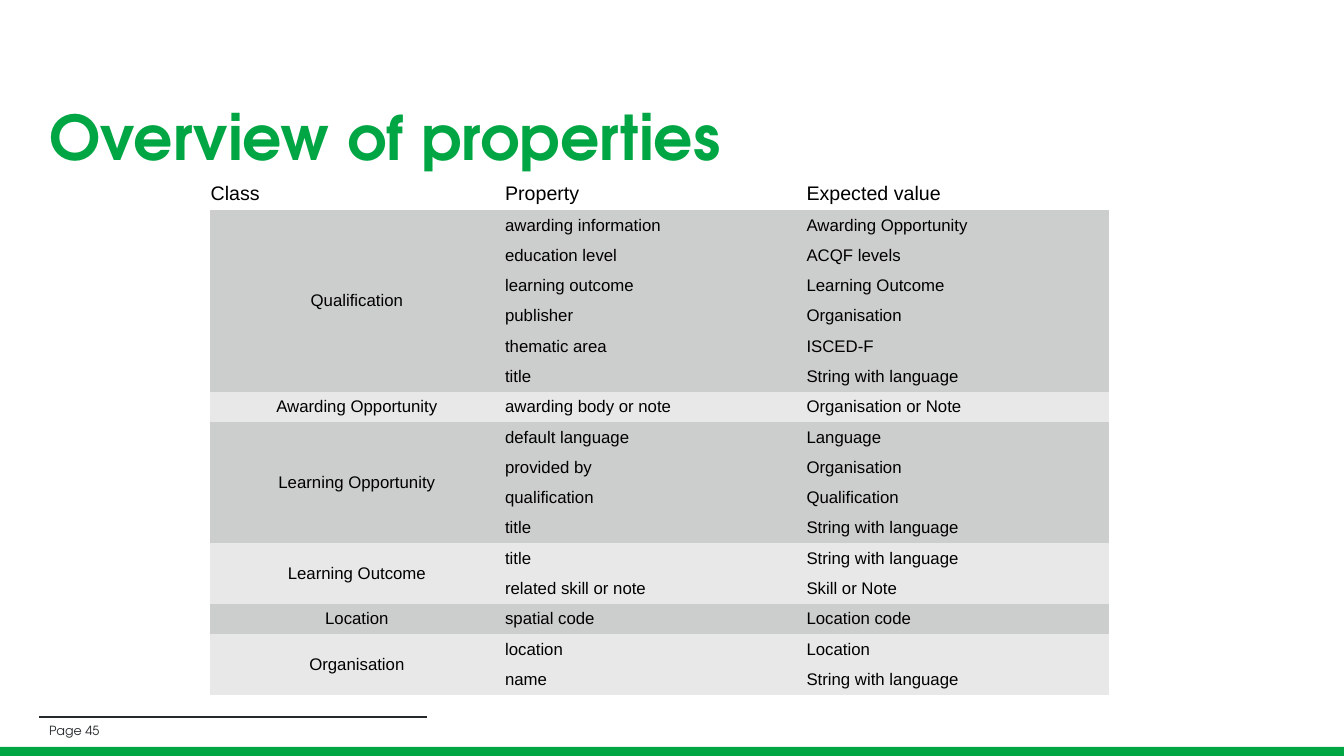
from lxml import etree
from pptx import Presentation
from pptx.dml.color import RGBColor
from pptx.enum.shapes import MSO_CONNECTOR, MSO_SHAPE
from pptx.enum.text import MSO_ANCHOR, PP_ALIGN
from pptx.oxml.ns import qn
from pptx.util import Inches, Pt

# Content
TITLE = "Overview of properties"
PAGE_LABEL = "Page 45"
HEADINGS = ("Class", "Property", "Expected value")
CLASSES = [
    ("Qualification", [
        ("awarding information", "Awarding Opportunity"),
        ("education level", "ACQF levels"),
        ("learning outcome", "Learning Outcome"),
        ("publisher", "Organisation"),
        ("thematic area", "ISCED-F"),
        ("title", "String with language"),
    ]),
    ("Awarding Opportunity", [("awarding body or note", "Organisation or Note")]),
    ("Learning Opportunity", [
        ("default language", "Language"),
        ("provided by", "Organisation"),
        ("qualification", "Qualification"),
        ("title", "String with language"),
    ]),
    ("Learning Outcome", [
        ("title", "String with language"),
        ("related skill or note", "Skill or Note"),
    ]),
    ("Location", [("spatial code", "Location code")]),
    ("Organisation", [
        ("location", "Location"),
        ("name", "String with language"),
    ]),
]

# Style
GREEN = RGBColor(0x00, 0xA6, 0x43)
DARK = RGBColor(0x24, 0x28, 0x2A)
BLACK = RGBColor(0x00, 0x00, 0x00)
BANDS = (RGBColor(0xCC, 0xCD, 0xCD), RGBColor(0xE8, 0xE8, 0xE8))
BRAND_FONT = "TeX Gyre Adventor"
TABLE_FONT = "Arial"
NO_STYLE_NO_GRID = "{2D5ABB26-0587-4C30-8999-92F81FD0307C}"
COLUMN_WIDTHS = (2.92, 2.99, 3.01)
HEADER_HEIGHT, ROW_HEIGHT = 0.32, 0.29


def add_run(paragraph, text, font, size, color, bold=False):
    run = paragraph.add_run()
    run.text = text
    run.font.name = font
    run.font.size = Pt(size)
    run.font.bold = bold
    run.font.color.rgb = color


def add_label(slide, box, text, size, color, bold=False):
    frame = slide.shapes.add_textbox(*map(Inches, box)).text_frame
    frame.word_wrap = True
    frame.vertical_anchor = MSO_ANCHOR.MIDDLE
    paragraph = frame.paragraphs[0]
    add_run(paragraph, text, BRAND_FONT, size, color, bold)
    return paragraph


def fill_cell(cell, text, size, align=PP_ALIGN.JUSTIFY, color=None):
    cell.margin_left = cell.margin_right = Inches(0.01)
    cell.margin_top = cell.margin_bottom = Inches(0.05)
    cell.vertical_anchor = MSO_ANCHOR.MIDDLE
    if color is None:
        cell.fill.background()
    else:
        cell.fill.solid()
        cell.fill.fore_color.rgb = color
    paragraph = cell.text_frame.paragraphs[0]
    paragraph.alignment = align
    add_run(paragraph, text, TABLE_FONT, size, BLACK)


def add_footer(slide):
    rule = slide.shapes.add_connector(
        MSO_CONNECTOR.STRAIGHT, Inches(0.39), Inches(7.11), Inches(4.24), Inches(7.11))
    rule.line.color.rgb = DARK
    rule.line.width = Pt(1.5)
    etree.SubElement(rule.element.find(qn("p:spPr")), qn("a:effectLst"))

    bar = slide.shapes.add_shape(
        MSO_SHAPE.RECTANGLE, Inches(-0.03), Inches(7.41), Inches(13.4), Inches(0.13))
    bar.shadow.inherit = False
    bar.fill.solid()
    bar.fill.fore_color.rgb = GREEN
    bar.line.fill.background()

    add_label(slide, (0.39, 7.15, 4.06, 0.19), PAGE_LABEL, 9, DARK)


def add_property_table(slide):
    property_count = sum(len(properties) for _, properties in CLASSES)
    frame = slide.shapes.add_table(
        property_count + 1, len(HEADINGS), Inches(2.08), Inches(1.75),
        Inches(sum(COLUMN_WIDTHS)),
        Inches(HEADER_HEIGHT + property_count * ROW_HEIGHT))
    table = frame.table
    table.first_row = table.horz_banding = False
    next(frame.element.iter(qn("a:tableStyleId"))).text = NO_STYLE_NO_GRID

    for column, width in zip(table.columns, COLUMN_WIDTHS):
        column.width = Inches(width)
    for index, row in enumerate(table.rows):
        row.height = Inches(ROW_HEIGHT if index else HEADER_HEIGHT)
    for index, heading in enumerate(HEADINGS):
        fill_cell(table.cell(0, index), heading, 14)

    # One merged class cell beside its properties, shades alternating by class
    first = 1
    for index, (name, properties) in enumerate(CLASSES):
        color = BANDS[index % 2]
        class_cell = table.cell(first, 0)
        if len(properties) > 1:
            class_cell.merge(table.cell(first + len(properties) - 1, 0))
        fill_cell(class_cell, name, 12, PP_ALIGN.CENTER, color)
        for row, values in enumerate(properties, first):
            for column, value in enumerate(values, 1):
                fill_cell(table.cell(row, column), value, 12, color=color)
        first += len(properties)


def main():
    presentation = Presentation()
    presentation.slide_width = Inches(13.33)
    presentation.slide_height = Inches(7.5)
    slide = presentation.slides.add_slide(presentation.slide_layouts[6])

    add_footer(slide)
    title = add_label(slide, (0.39, 0.67, 12.54, 1.45), TITLE, 44, GREEN, bold=True)
    title.line_spacing = 0.9
    add_property_table(slide)

    presentation.save("out.pptx")


if __name__ == "__main__":
    main()
